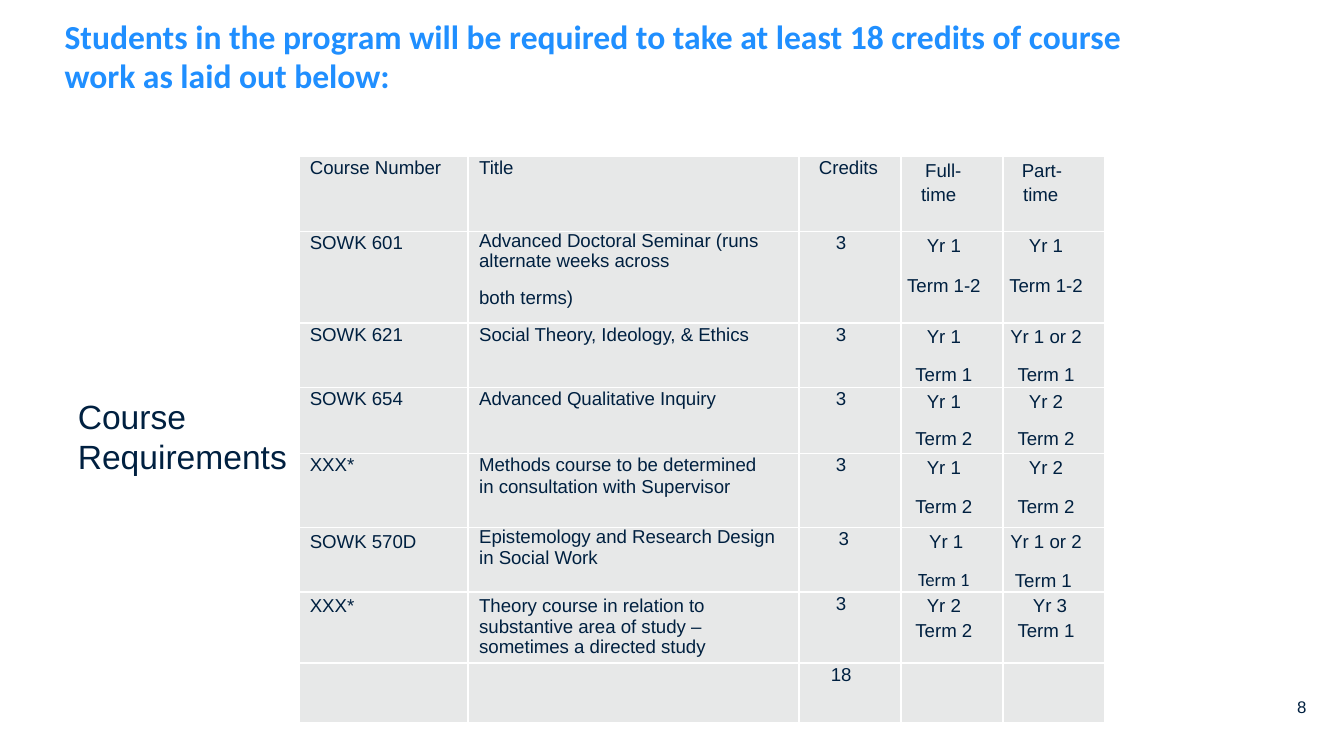
from dataclasses import dataclass

from lxml import etree
from pptx import Presentation
from pptx.dml.color import RGBColor
from pptx.enum import text
from pptx.oxml import ns
from pptx.util import Pt


@dataclass(frozen=True)
class Theme:
    ink: str = "002040"
    title: str = "208FFF"
    cell: str = "E7E8E8"
    border: str = "FFFFFF"
    body_font: str = "Arial"
    title_font: str = "Calibri"
    heading_size: float = 18
    table_size: float = 10
    number_size: float = 9


@dataclass(frozen=True)
class Line:
    """One paragraph of a cell; spacing is a multiple, or points above 2."""
    words: str
    spacing: float = 1.07
    left: float = 5.8
    indent: float = 0
    after: float = 8
    centred: bool = False
    font: str = "Arial"


@dataclass(frozen=True)
class Cell:
    lines: tuple[Line, ...] = ()
    right: float = 0


THEME = Theme()
EXACT = 13.3
COLUMNS = (90.7, 177.1, 54.7, 54.7, 54.7)
ROWS = (40.3, 49, 34.6, 35.3, 39.6, 31.7, 38.2, 31.7)


def left_cell(*lines: Line, right: float = 0) -> Cell:
    return Cell(lines, right)


def course(code: str, spacing: float = 1.07) -> Cell:
    return Cell((Line(code, spacing),))


def credit(value: str) -> Cell:
    return Cell((Line(value, left=0, centred=True),), 9.4)


def schedule(year: str, term: str, term_spacing: float = EXACT, year_after: float = 8,
             year_left: float = 0.7, term_font: str = THEME.body_font) -> Cell:
    return Cell((
        Line(year, EXACT, year_left, after=year_after, centred=True),
        Line(term, term_spacing, 0.7, centred=True, font=term_font),
    ), 9.4)


TABLE = (
    (course("Course Number"), course("Title"), left_cell(Line("Credits", left=10.8)),
     left_cell(Line("Full- time", 13.2, 10.8, 2.2), right=10),
     left_cell(Line("Part- time", 13.2, 10.8, -0.7), right=10)),
    (course("SOWK 601"),
     left_cell(Line("Advanced Doctoral Seminar (runs alternate weeks across", 0.97),
               Line("both terms)", 11.4), right=12),
     credit("3"), schedule("Yr 1", "Term 1-2"), schedule("Yr 1", "Term 1-2")),
    (course("SOWK 621"), course("Social Theory, Ideology, & Ethics"), credit("3"),
     schedule("Yr 1", "Term 1", 12.1), schedule("Yr 1 or 2", "Term 1", 12.1)),
    (course("SOWK 654"), course("Advanced Qualitative Inquiry"), credit("3"),
     schedule("Yr 1", "Term 2", 12.1), schedule("Yr 2", "Term 2", 12.1)),
    (course("XXX*"),
     left_cell(Line("Methods course to be determined in consultation with Supervisor"),
               right=18),
     credit("3"), schedule("Yr 1", "Term 2"), schedule("Yr 2", "Term 2")),
    (course("SOWK 570D", EXACT),
     left_cell(Line("Epistemology and Research Design in Social Work", 0.98), right=10),
     credit(" 3"), schedule(" Yr 1", "Term 1", term_font=THEME.title_font),
     schedule("Yr 1 or 2", "Term 1 ")),
    (course("XXX*", EXACT),
     left_cell(Line("Theory course in relation to", EXACT, after=0),
               Line("substantive area of study – sometimes a directed study", 0.98),
               right=12),
     credit("3"), schedule("Yr 2", "Term 2", year_after=0),
     schedule("Yr 3", "Term 1", year_after=0, year_left=5)),
    (Cell(), Cell(), credit("18"), Cell(), Cell()),
)


def write(paragraph, words: str, *, size: float, font: str = THEME.body_font,
          color: str = THEME.ink, bold: bool = False,
          align=text.PP_ALIGN.LEFT, spacing: float = 1, after: float = 0) -> None:
    paragraph.alignment = align
    paragraph.line_spacing = Pt(spacing) if spacing > 2 else spacing
    paragraph.space_before = Pt(0)
    paragraph.space_after = Pt(after)
    run = paragraph.add_run()
    run.text = words
    run.font.size = Pt(size)
    run.font.name = font
    run.font.bold = bold
    run.font.color.rgb = RGBColor.from_string(color)


def clear_insets(frame) -> None:
    frame.margin_left = frame.margin_right = Pt(0)
    frame.margin_top = frame.margin_bottom = Pt(0)


def add_borders(cell) -> None:
    properties = cell._tc.get_or_add_tcPr()
    for position, side in enumerate(("lnL", "lnR", "lnT", "lnB")):
        line = etree.Element(ns.qn(f"a:{side}"), w=str(Pt(1)))
        fill = etree.SubElement(line, ns.qn("a:solidFill"))
        etree.SubElement(fill, ns.qn("a:srgbClr"), val=THEME.border)
        properties.insert(position, line)


def fill_cell(cell, content: Cell) -> None:
    clear_insets(cell)
    cell.margin_right = Pt(content.right)
    cell.fill.solid()
    cell.fill.fore_color.rgb = RGBColor.from_string(THEME.cell)
    add_borders(cell)
    frame = cell.text_frame
    for index, line in enumerate(content.lines):
        paragraph = frame.add_paragraph() if index else frame.paragraphs[0]
        properties = paragraph._p.get_or_add_pPr()
        properties.set("marL", str(Pt(line.left)))
        properties.set("indent", str(Pt(line.indent)))
        write(paragraph, line.words, size=THEME.table_size, font=line.font,
              align=text.PP_ALIGN.CENTER if line.centred else text.PP_ALIGN.LEFT,
              spacing=line.spacing, after=line.after)


def add_course_table(slide) -> None:
    frame = slide.shapes.add_table(len(ROWS), len(COLUMNS), Pt(160.2), Pt(83.8),
                                   Pt(sum(COLUMNS)), Pt(sum(ROWS)))
    table = frame.table
    table.first_row = table.horz_banding = False
    for column, width in zip(table.columns, COLUMNS):
        column.width = Pt(width)
    for row, height, contents in zip(table.rows, ROWS, TABLE):
        row.height = Pt(height)
        for cell, content in zip(row.cells, contents):
            fill_cell(cell, content)


def add_title(slide) -> None:
    title = slide.shapes.title
    title.left, title.top, title.width, title.height = Pt(34.6), Pt(15.1), Pt(603.4), Pt(51.1)
    frame = title.text_frame
    clear_insets(frame)
    frame.margin_bottom = Pt(21)
    frame.auto_size = text.MSO_AUTO_SIZE.NONE
    frame.vertical_anchor = text.MSO_ANCHOR.MIDDLE
    write(frame.paragraphs[0],
          "Students in the program will be required to take at least 18 credits "
          "of course work as laid out below:",
          size=THEME.heading_size, font=THEME.title_font, color=THEME.title,
          bold=True, spacing=21)


def add_side_heading(slide) -> None:
    box = slide.shapes.add_textbox(Pt(34.6), Pt(208.1), Pt(127.4), Pt(51.1))
    frame = box.text_frame
    frame.word_wrap = False
    frame.vertical_anchor = text.MSO_ANCHOR.MIDDLE
    write(frame.paragraphs[0], "Course", size=THEME.heading_size)
    write(frame.add_paragraph(), "Requirements", size=THEME.heading_size)


def add_page_number(slide) -> None:
    box = slide.shapes.add_textbox(Pt(676.1), Pt(373), Pt(23.8), Pt(15.1))
    frame = box.text_frame
    frame.word_wrap = True
    clear_insets(frame)
    write(frame.paragraphs[0], "8", size=THEME.number_size, align=text.PP_ALIGN.RIGHT)


def main() -> None:
    presentation = Presentation()
    presentation.slide_width, presentation.slide_height = Pt(720), Pt(405)
    slide = presentation.slides.add_slide(presentation.slide_layouts[5])
    add_title(slide)
    add_course_table(slide)
    add_side_heading(slide)
    add_page_number(slide)
    presentation.save("out.pptx")


if __name__ == "__main__":
    main()
